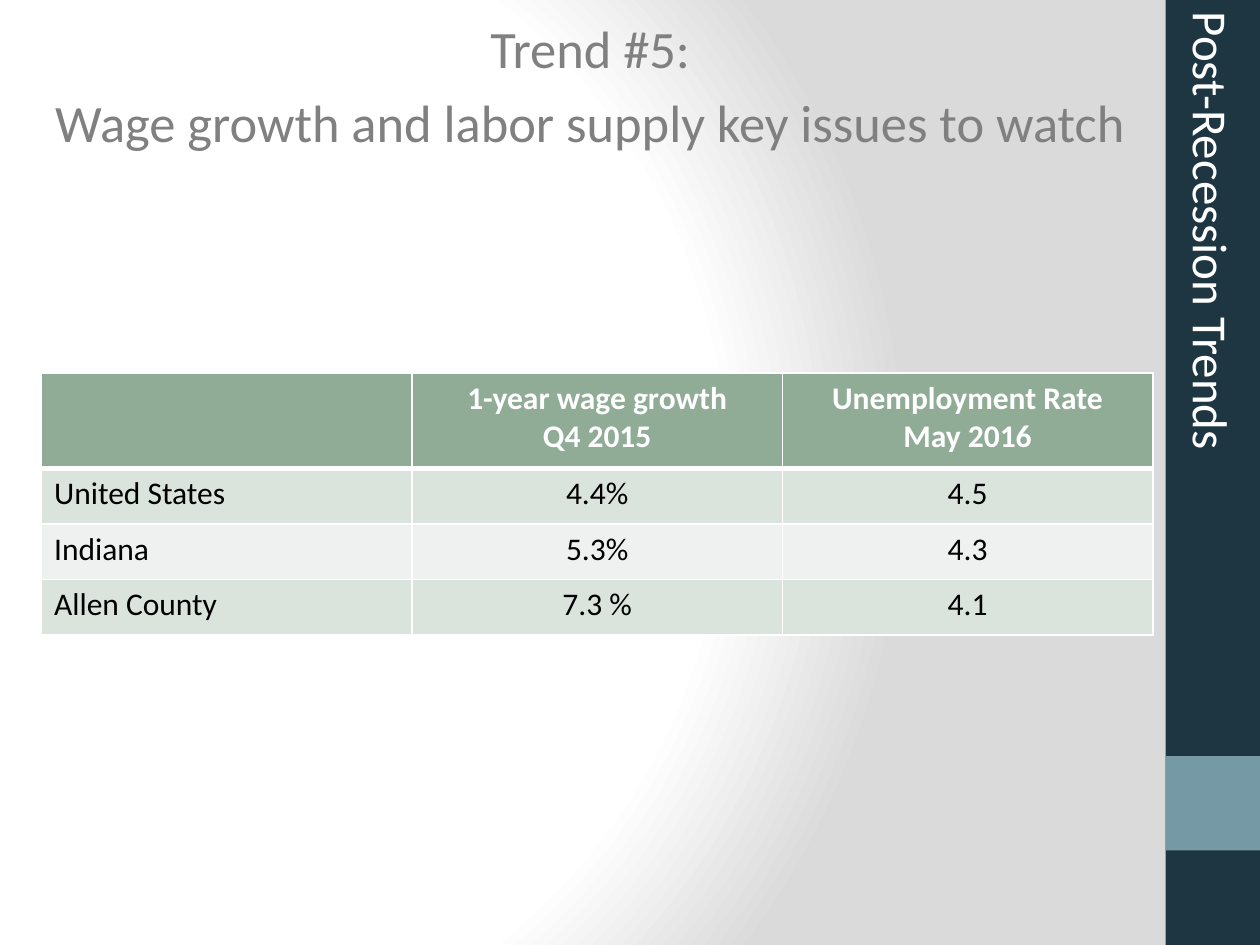
"""Build the wage growth and labor supply trend slide."""
from lxml.etree import SubElement
from pptx import Presentation
from pptx.dml.color import RGBColor as RGB
from pptx.enum.shapes import MSO_SHAPE as SHAPE
from pptx.enum.text import MSO_ANCHOR as ANCHOR, PP_ALIGN as ALIGN
from pptx.oxml import parse_xml
from pptx.oxml.ns import nsdecls, qn
from pptx.util import Inches as In, Pt

W, H = 10, 7.5
BAR_W = 0.75
BAR_X = W - BAR_W
C = {"navy": "1D3641", "teal": "759AA5", "gray": "808080", "white": "FFFFFF",
     "shade": "DADADA", "black": "000000", "header": "90AC97",
     "odd": "DBE3DD", "even": "EEF1EF"}
TITLE = ["Trend #5:", "Wage growth and labor supply key issues to watch"]
SIDE = "Post-Recession Trends"
ROWS = [
    ("", "1-year wage growth\nQ4 2015", "Unemployment Rate\nMay 2016"),
    ("United States", "4.4%", "4.5"),
    ("Indiana", "5.3%", "4.3"),
    ("Allen County", "7.3 %", "4.1"),
]
BARS = [(0, H, "navy"), (6, BAR_W, "teal")]
TABLE_X, TABLE_Y, COL_W, HEAD_H, ROW_H = 0.33, 2.96, 2.94, 0.76, 0.44


def write(tf, lines, size, color, bold=False, **para):
    """Fill a text frame with one formatted paragraph per line."""
    tf.text = "\n".join(lines)
    for p in tf.paragraphs:
        for key, value in para.items():
            setattr(p, key, value)
        fmt = {"name": "Calibri", "size": Pt(size), "bold": bold}
        for r in p.runs:
            for key, value in fmt.items():
                setattr(r.font, key, value)
            r.font.color.rgb = RGB.from_string(C[color])


def set_background(s):
    """Give the slide a circular white to gray gradient."""
    stops = "".join(
        f'<a:gs pos="{pos * 1000}"><a:srgbClr val="{C[name]}"/></a:gs>'
        for pos, name in [(0, "white"), (75, "white"), (100, "shade")])
    s.element.cSld.insert(0, parse_xml(
        f'<p:bg {nsdecls("p", "a")}><p:bgPr><a:gradFill rotWithShape="1">'
        f'<a:gsLst>{stops}</a:gsLst><a:path path="circle">'
        '<a:fillToRect l="20000" t="50000" r="100000" b="50000"/></a:path>'
        '</a:gradFill><a:effectLst/></p:bgPr></p:bg>'))


def set_borders(cell, bottom):
    """Draw white cell borders, with the given bottom width in points."""
    tc_pr = cell._tc.get_or_add_tcPr()
    widths = {"lnL": 1, "lnR": 1, "lnT": 1, "lnB": bottom}
    for i, (tag, width) in enumerate(widths.items()):
        ln = SubElement(tc_pr, qn(f"a:{tag}"), w=str(Pt(width)))
        fill = SubElement(ln, qn("a:solidFill"))
        SubElement(fill, qn("a:srgbClr"), val=C["white"])
        tc_pr.insert(i, ln)


def add_bars(s):
    """Add the side bar and its accent square."""
    for y, h, color in BARS:
        sp = s.shapes.add_shape(SHAPE.RECTANGLE, In(BAR_X), In(y), In(BAR_W), In(h))
        sp.shadow.inherit = False
        sp.fill.solid()
        sp.fill.fore_color.rgb = RGB.from_string(C[color])
        sp.line.fill.background()


def add_title(s):
    """Place and format the title."""
    sp = s.shapes.title
    frame = {"left": In(0), "top": In(0.08), "width": In(BAR_X), "height": In(1.42)}
    for key, value in frame.items():
        setattr(sp, key, value)
    tf = sp.text_frame
    tf.vertical_anchor = ANCHOR.TOP
    write(tf, TITLE, 30, "gray", alignment=ALIGN.CENTER, space_before=Pt(6))
    for p in tf.paragraphs:
        p._p.get_or_add_pPr().set("marL", str(In(0.12)))


def add_table(s):
    """Add the wage and unemployment table."""
    n, cols = len(ROWS), len(ROWS[0])
    table = s.shapes.add_table(n, cols, In(TABLE_X), In(TABLE_Y), In(COL_W * cols),
                               In(HEAD_H + ROW_H * (n - 1))).table
    for col in table.columns:
        col.width = In(COL_W)
    for i, values in enumerate(ROWS):
        head = i == 0
        table.rows[i].height = In(HEAD_H if head else ROW_H)
        for j, value in enumerate(values):
            cell = table.cell(i, j)
            cell.fill.solid()
            fill = "header" if head else "odd" if i % 2 else "even"
            cell.fill.fore_color.rgb = RGB.from_string(C[fill])
            write(cell.text_frame, value.split("\n"), 18,
                  "white" if head else "black", head,
                  alignment=ALIGN.CENTER if j else ALIGN.LEFT)
            set_borders(cell, 3 if head else 1)


def add_side_label(s):
    """Add the rotated label on the side bar."""
    sp = s.shapes.add_textbox(In(6.66), In(2.67), In(5.92), In(0.57))
    sp.rotation = 90
    sp.text_frame.word_wrap = True
    write(sp.text_frame, [SIDE], 28, "white")


def main():
    prs = Presentation()
    prs.slide_width, prs.slide_height = In(W), In(H)
    s = prs.slides.add_slide(prs.slide_layouts[5])
    set_background(s)
    add_bars(s)
    add_title(s)
    add_table(s)
    add_side_label(s)
    prs.save("out.pptx")


if __name__ == "__main__":
    main()
